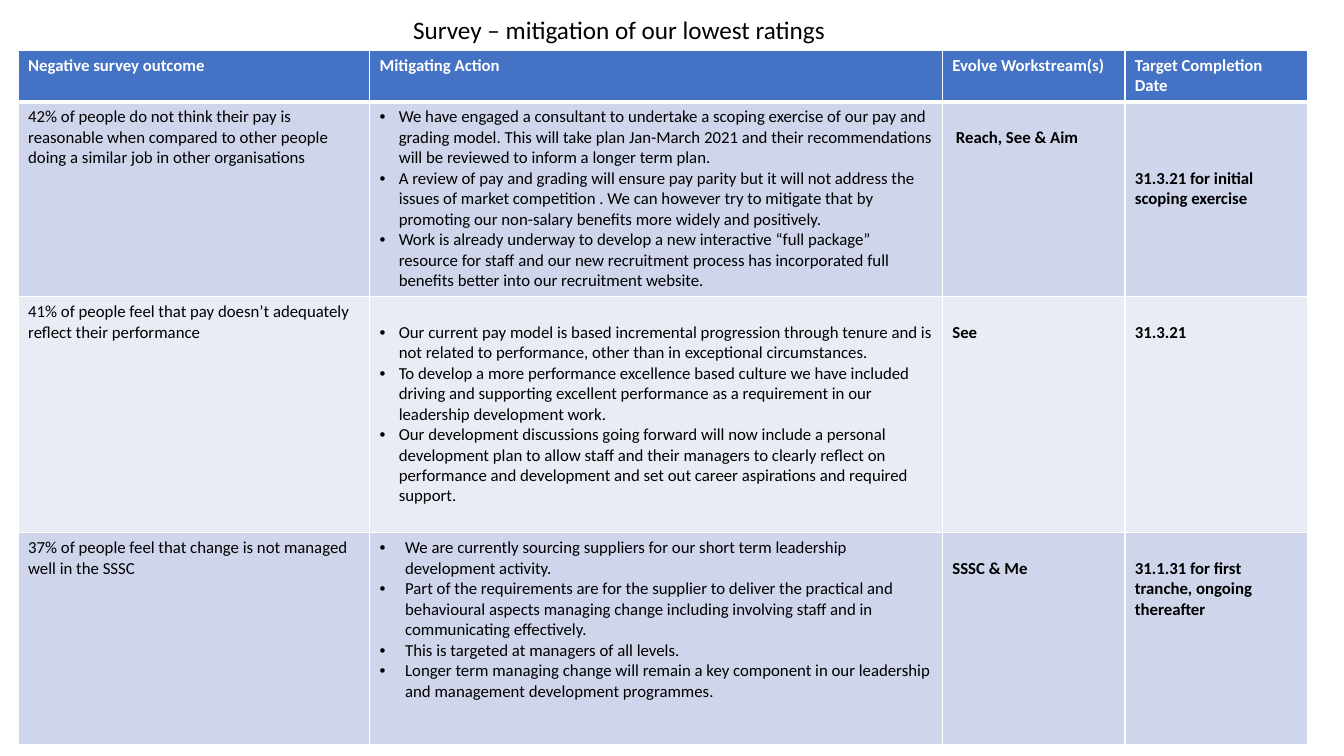
from lxml.etree import SubElement
from pptx import Presentation
from pptx.dml.color import RGBColor
from pptx.enum.text import MSO_ANCHOR, MSO_AUTO_SIZE, PP_ALIGN
from pptx.oxml import parse_xml
from pptx.oxml.ns import nsdecls, qn
from pptx.util import Cm, Pt

FONT = "Calibri"
WHITE, BLACK, BLUE = "FFFFFF", "000000", "4472C4"
BANDS = ["CFD5EA", "E9EBF5"]
LINE = 0.516  # height in cm of one 12 pt line
MARGIN_X, MARGIN_Y = 0.25, 0.13

COL_WIDTHS = [8.86, 14.43, 4.6, 4.6]
HEADER_HEIGHT = 1.29
HEADINGS = ["Negative survey outcome", "Mitigating Action",
            "Evolve Workstream(s)", "Target Completion Date"]

# drops: lines by which the action, workstream and date sit below the row top
ROWS = [
    dict(
        height=4.91, hang=0.48, drops=(0, 1, 3), shift=0.09,
        outcome="42% of people do not think their pay is reasonable when compared to "
                "other people doing a similar job in other organisations",
        actions=[
            "We have engaged a consultant to undertake a scoping exercise of our pay and "
            "grading model. This will take plan Jan-March 2021 and their recommendations "
            "will be reviewed to inform a longer term plan.",
            "A review of pay and grading will ensure pay parity but it will not address "
            "the issues of market competition . We can however try to mitigate that by "
            "promoting our non-salary benefits more widely and positively.",
            "Work is already underway to develop a new interactive “full package” "
            "resource for staff and our new recruitment process has incorporated full "
            "benefits better into our recruitment website.",
        ],
        workstream="Reach, See & Aim", date="31.3.21 for initial scoping exercise"),
    dict(
        height=5.95, hang=0.48, drops=(1, 1, 1), shift=0,
        outcome="41% of people feel that pay doesn’t adequately reflect their performance",
        actions=[
            "Our current pay model is based incremental progression through tenure and is "
            "not related to performance, other than in exceptional circumstances.",
            "To develop a more performance excellence based culture we have included "
            "driving and supporting excellent performance as a requirement in our "
            "leadership development work.",
            "Our development discussions going forward will now include a personal "
            "development plan to allow staff and their managers to clearly reflect on "
            "performance and development and set out career aspirations and required "
            "support.",
        ],
        workstream="See", date="31.3.21"),
    dict(
        height=5.34, hang=0.64, drops=(0, 1, 1), shift=0,
        outcome="37% of people feel that change is not managed well in the SSSC",
        actions=[
            "We are currently sourcing suppliers for our short term leadership "
            "development activity.",
            "Part of the requirements are for the supplier to deliver the practical and "
            "behavioural aspects managing change including involving staff and in "
            "communicating effectively.",
            "This is targeted at managers of all levels.",
            "Longer term managing change will remain a key component in our leadership "
            "and management development programmes.",
        ],
        workstream="SSSC & Me", date="31.1.31 for first tranche, ongoing thereafter"),
]


def rgb(value):
    return RGBColor.from_string(value)


def write(tf, texts, size=12, color=BLACK, bold=False, hang=None):
    """Fill a text frame, one paragraph per text; hang in cm makes bullets."""
    for i, text in enumerate(texts):
        p = tf.paragraphs[0] if i == 0 else tf.add_paragraph()
        if hang:
            pPr = p._p.get_or_add_pPr()
            pPr.set("marL", str(Cm(hang)))
            pPr.set("indent", str(-Cm(hang)))
            SubElement(pPr, qn("a:buFont")).set("typeface", "Arial")
            SubElement(pPr, qn("a:buChar")).set("char", "•")
        p.alignment = PP_ALIGN.LEFT
        r = p.add_run()
        r.text = text
        r.font.name, r.font.size, r.font.bold = FONT, Pt(size), bold
        r.font.color.rgb = rgb(color)


def set_borders(cell, top=1, bottom=1):
    tcPr = cell._tc.get_or_add_tcPr()
    widths = {"lnL": 1, "lnR": 1, "lnT": top, "lnB": bottom}
    for i, (side, width) in enumerate(widths.items()):
        tcPr.insert(i, parse_xml(
            f'<a:{side} {nsdecls("a")} w="{Pt(width)}"><a:solidFill>'
            f'<a:srgbClr val="{WHITE}"/></a:solidFill></a:{side}>'))


def fill_cell(cell, texts, fill, drop=0, shift=0, top=1, bottom=1, **fmt):
    cell.fill.solid()
    cell.fill.fore_color.rgb = rgb(fill)
    cell.margin_left, cell.margin_right = Cm(MARGIN_X + shift), Cm(MARGIN_X)
    cell.margin_top, cell.margin_bottom = Cm(MARGIN_Y + drop * LINE), Cm(MARGIN_Y)
    set_borders(cell, top, bottom)
    write(cell.text_frame, texts, **fmt)


def add_title(s, text, left, top, width, height):
    sp = s.shapes.title
    sp.left, sp.top, sp.width, sp.height = Cm(left), Cm(top), Cm(width), Cm(height)
    tf = sp.text_frame
    tf.auto_size, tf.word_wrap = MSO_AUTO_SIZE.NONE, False
    tf.vertical_anchor = MSO_ANCHOR.TOP
    tf.margin_left = tf.margin_right = Cm(MARGIN_X)
    tf.margin_top = tf.margin_bottom = Cm(MARGIN_Y)
    write(tf, [text], size=18)


def add_survey_table(s, left, top):
    heights = [HEADER_HEIGHT] + [row["height"] for row in ROWS]
    table = s.shapes.add_table(len(heights), len(COL_WIDTHS), Cm(left), Cm(top),
                               Cm(sum(COL_WIDTHS)), Cm(sum(heights))).table
    for col, width in zip(table.columns, COL_WIDTHS):
        col.width = Cm(width)
    for line, height in zip(table.rows, heights):
        line.height = Cm(height)

    for c, heading in enumerate(HEADINGS):
        fill_cell(table.cell(0, c), [heading], BLUE, bottom=3, color=WHITE, bold=True)
    for i, row in enumerate(ROWS):
        action_drop, stream_drop, date_drop = row["drops"]
        base = dict(fill=BANDS[i % 2], top=3 if i == 0 else 1)
        outcome, action, stream, date = (table.cell(i + 1, c) for c in range(4))
        fill_cell(outcome, [row["outcome"]], **base)
        fill_cell(action, row["actions"], drop=action_drop, hang=row["hang"], **base)
        fill_cell(stream, [row["workstream"]], drop=stream_drop, shift=row["shift"],
                  bold=True, **base)
        fill_cell(date, [row["date"]], drop=date_drop, bold=True, **base)


def main():
    prs = Presentation()
    prs.slide_width, prs.slide_height = Cm(33.87), Cm(19.05)
    s = prs.slides.add_slide(prs.slide_layouts[5])
    add_title(s, "Survey – mitigation of our lowest ratings", 10.16, 0.23, 11.02, 1.03)
    add_survey_table(s, 0.46, 1.27)
    prs.save("out.pptx")


if __name__ == "__main__":
    main()
